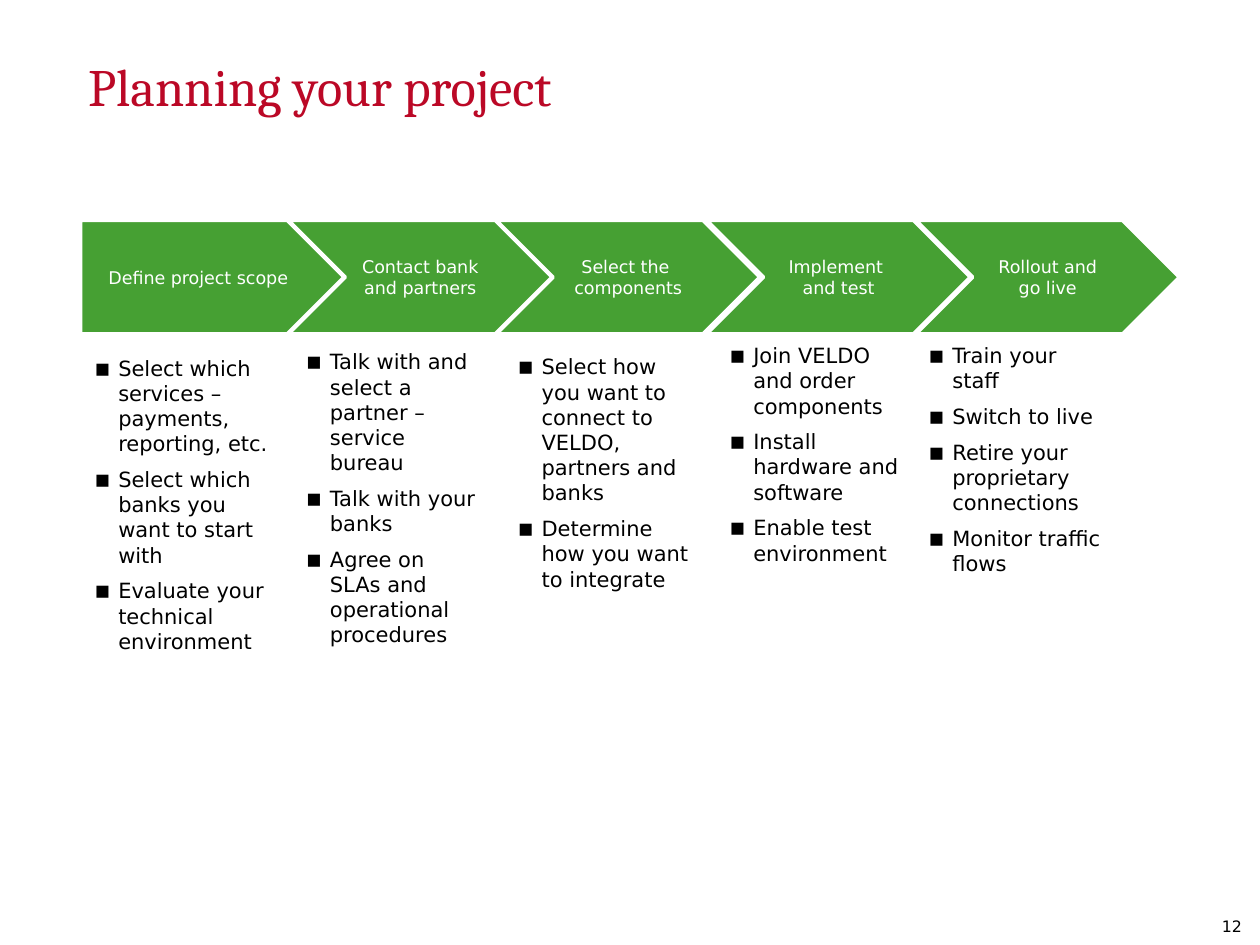
import pptx
import pptx.dml.color
import pptx.enum.shapes
import pptx.enum.text
import pptx.util
from lxml import etree

Inches = pptx.util.Inches
Pt = pptx.util.Pt
Color = pptx.dml.color.RGBColor
Shape = pptx.enum.shapes.MSO_SHAPE
Align = pptx.enum.text.PP_ALIGN
Anchor = pptx.enum.text.MSO_ANCHOR

RED = Color(0xBB, 0x08, 0x26)
GREEN = Color(0x46, 0xA0, 0x33)
WHITE = Color(0xFF, 0xFF, 0xFF)
BLACK = Color(0, 0, 0)
SERIF = "Cambria"
SANS = "DejaVu Sans"

STEPS = [
    (0.64, "Define project scope", (0.65, 2.77, 1.61, 2.49), [
        "Select which services – payments, reporting, etc.",
        "Select which banks you want to start with",
        "Evaluate your technical environment"]),
    (2.29, "Contact bank and partners", (2.33, 2.72, 1.59, 2.49), [
        "Talk with and select a partner – service bureau",
        "Talk with your banks",
        "Agree on SLAs and operational procedures"]),
    (3.94, "Select the \ncomponents", (4.01, 2.76, 1.59, 2.32), [
        "Select how you want to connect to VELDO, partners and banks",
        "Determine how you want to integrate"]),
    (5.61, "Implement \nand test", (5.69, 2.67, 1.58, 1.88), [
        "Join VELDO and order components",
        "Install hardware and software",
        "Enable test environment"]),
    (7.27, "Rollout and go live", (7.27, 2.67, 1.62, 1.97), [
        "Train your staff",
        "Switch to live",
        "Retire your proprietary connections",
        "Monitor traffic flows"]),
]


def to_emu(box):
    return [Inches(side) for side in box]


def style(frame, font, size, color):
    for para in frame.paragraphs:
        for run in para.runs:
            run.font.name = font
            run.font.size = Pt(size)
            run.font.color.rgb = color


def add_title(slide, box, text):
    title = slide.shapes.title
    title.left, title.top, title.width, title.height = to_emu(box)
    frame = title.text_frame
    frame.text = text
    frame.vertical_anchor = Anchor.TOP
    para = frame.paragraphs[0]
    para.alignment = Align.LEFT
    para.line_spacing = 1.05
    style(frame, SERIF, 30, RED)


def add_step(slide, box, kind, text):
    step = slide.shapes.add_shape(kind, *to_emu(box))
    step.shadow.inherit = False
    step.fill.solid()
    step.fill.fore_color.rgb = GREEN
    step.line.color.rgb = WHITE
    step.line.width = Pt(2)
    frame = step.text_frame
    frame.text = text
    frame.vertical_anchor = Anchor.MIDDLE
    for para in frame.paragraphs:
        para.alignment = Align.CENTER
    style(frame, SANS, 10, WHITE)


def add_bullet(para):
    props = para._p.get_or_add_pPr()
    props.set("marL", str(Inches(0.19)))
    props.set("indent", str(Inches(-0.19)))
    for tag, key, value in (("buSzPct", "val", "115000"),
                            ("buFont", "typeface", SANS),
                            ("buChar", "char", "▪")):
        etree.SubElement(props, pptx.oxml.ns.qn("a:" + tag)).set(key, value)


def add_text(slide, box, text):
    frame = slide.shapes.add_textbox(*to_emu(box)).text_frame
    frame.word_wrap = True
    frame.text = text
    return frame


def add_list(slide, box, items):
    frame = add_text(slide, box, "\n".join(items))
    for para in frame.paragraphs:
        para.space_after = Pt(6)
        add_bullet(para)
    style(frame, SANS, 12, BLACK)


def add_number(slide, box, text):
    style(add_text(slide, box, text), SANS, 9, BLACK)


def main():
    deck = pptx.Presentation()
    deck.slide_width, deck.slide_height = Inches(10), Inches(7.5)
    slide = deck.slides.add_slide(deck.slide_layouts[5])
    add_title(slide, (0.6, 0.35, 9, 1.25), "Planning your project")
    for index, (left, label, box, items) in enumerate(STEPS):
        kind = Shape.CHEVRON if index else Shape.PENTAGON
        add_step(slide, (left, 1.75, 2.09, 0.9), kind, label)
        add_list(slide, box, items)
    add_number(slide, (9.6, 7.23, 0.4, 0.27), "12")
    deck.save("out.pptx")


if __name__ == "__main__":
    main()
